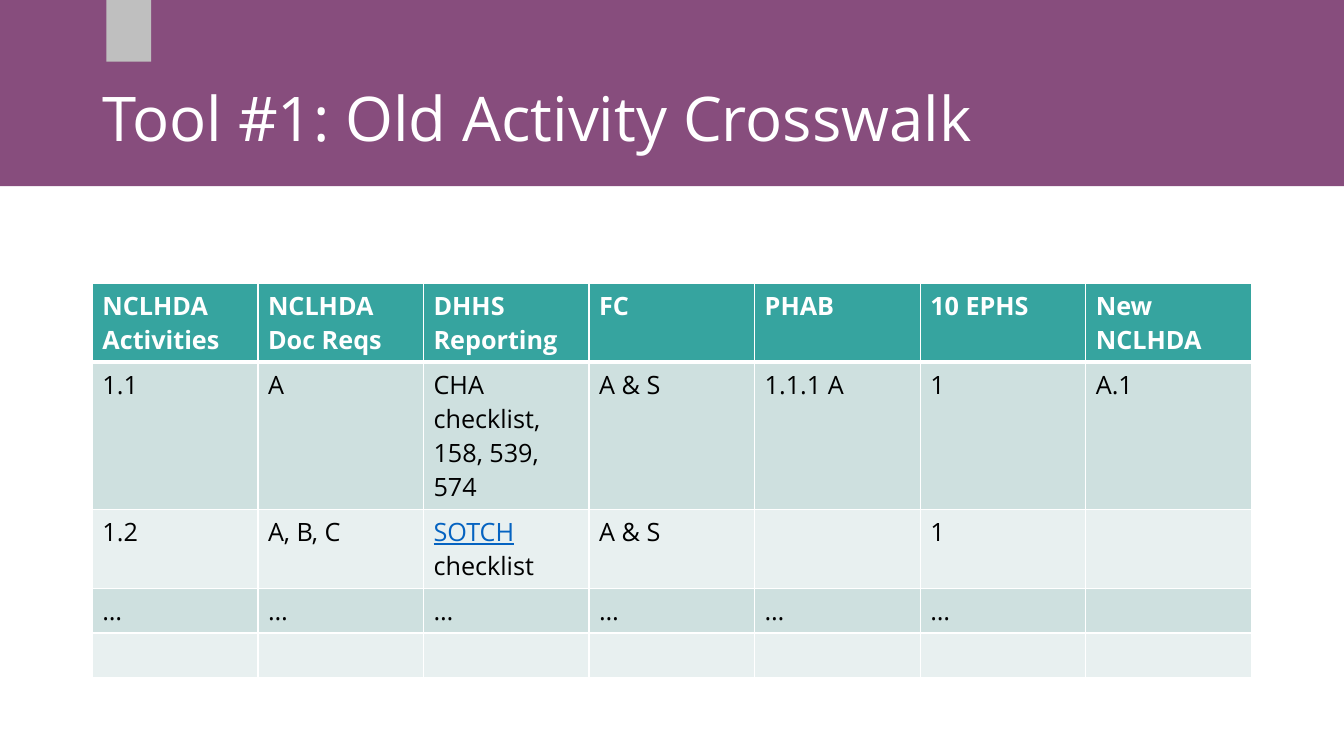
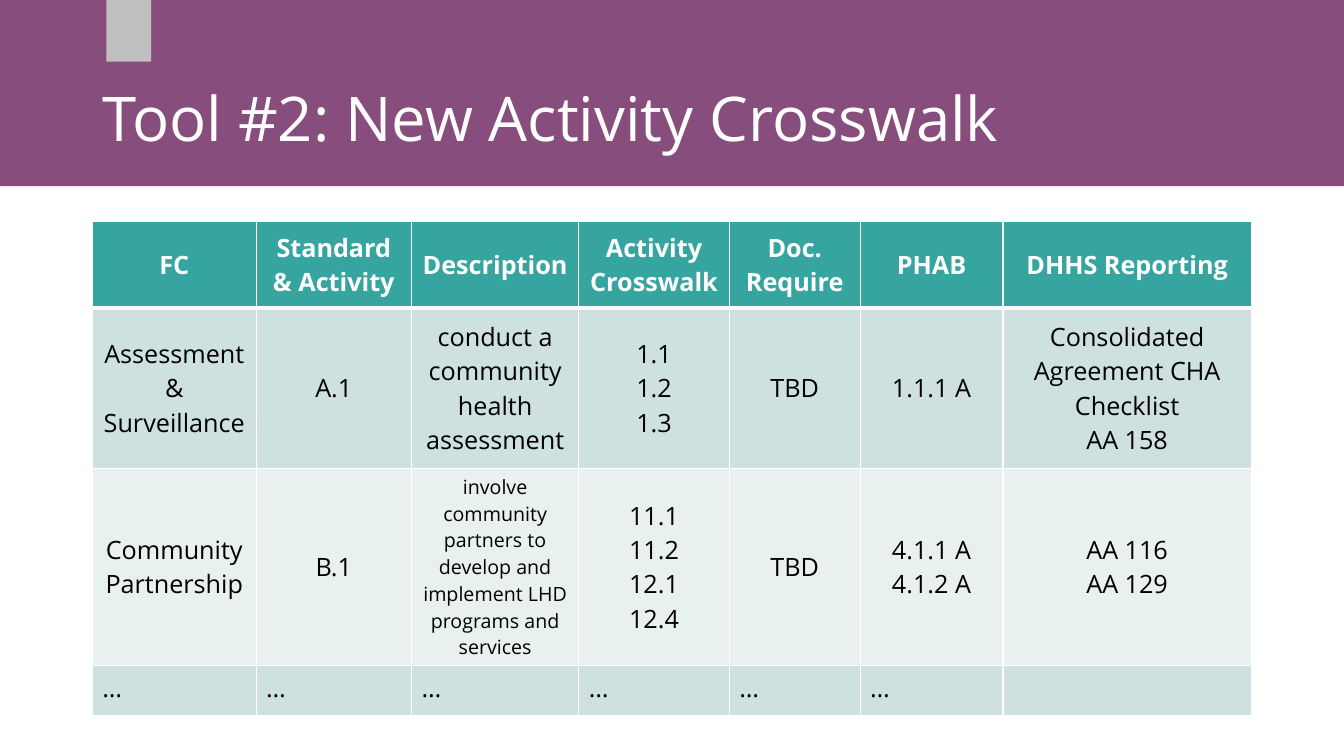
from pptx import Presentation
from pptx.dml.color import RGBColor
from pptx.enum.shapes import MSO_SHAPE
from pptx.enum.text import MSO_ANCHOR, PP_ALIGN
from pptx.oxml.ns import qn
from pptx.util import Pt
from lxml import etree

RECTANGLE = MSO_SHAPE.RECTANGLE
MIDDLE, TOP = MSO_ANCHOR.MIDDLE, MSO_ANCHOR.TOP
CENTER, LEFT = PP_ALIGN.CENTER, PP_ALIGN.LEFT

FONT = "Open Sans"
COLORS = {
    "band": "874D7D",
    "tab": "BFBFBF",
    "header": "36A49F",
    "odd row": "CEE0DF",
    "even row": "E8F0F0",
    "light": "FFFFFF",
    "dark": "000000",
    "link": "0563C1",
}
PAGE_WIDTH, PAGE_HEIGHT = 960, 540
MARGIN = 66
CONTENT_WIDTH = PAGE_WIDTH - 2 * MARGIN
BAND_BOX = (0, 0, PAGE_WIDTH, 133)
TAB_BOX = (76, 0, 32, 44)
TITLE_BOX = (MARGIN, 29, CONTENT_WIDTH, 104)
TITLE_ONLY = 5

OLD_ROWS = [
    ["NCLHDA Activities", "NCLHDA Doc Reqs", "DHHS Reporting", "FC", "PHAB",
     "10 EPHS", "New NCLHDA"],
    ["1.1", "A", "CHA checklist, 158, 539, 574", "A & S", "1.1.1 A", "1", "A.1"],
    ["1.2", "A, B, C", "SOTCH", "A & S", "", "1", ""],
    ["…"] * 6 + [""],
    [""] * 7,
]
NEW_ROWS = [
    ["FC", "Standard & Activity", "Description", "Activity Crosswalk",
     "Doc. Require", "PHAB", "DHHS Reporting"],
    ["Assessment & Surveillance", "A.1", "conduct a community health assessment",
     "1.1\n1.2\n1.3", "TBD", "1.1.1 A",
     "Consolidated Agreement CHA Checklist\nAA 158"],
    ["Community Partnership", "B.1",
     "involve community partners to develop and implement LHD programs and services",
     "11.1\n11.2\n12.1\n12.4", "TBD", "4.1.1 A\n4.1.2 A", "AA 116\nAA 129"],
    ["…"] * 6 + [""],
]


def rgb(name):
    return RGBColor.from_string(COLORS[name])


def points(box):
    return [Pt(length) for length in box]


def style_span(span, size, color, bold=False):
    span.font.name = FONT
    span.font.size = Pt(size)
    span.font.bold = bold
    span.font.color.rgb = rgb(color)


def place(shape, box):
    shape.left, shape.top, shape.width, shape.height = points(box)


def decorate_layout(layout, page):
    """Draw the band and tab on a page, then move them to the shared layout."""
    title = layout.placeholders[0]
    place(title, TITLE_BOX)
    for number, (box, color) in enumerate([(BAND_BOX, "band"), (TAB_BOX, "tab")]):
        shape = page.shapes.add_shape(RECTANGLE, *points(box))
        shape.shadow.inherit = False
        shape.fill.solid()
        shape.fill.fore_color.rgb = rgb(color)
        shape.line.fill.background()
        shape.element.nvSpPr.cNvPr.id = 100 + number
        title.element.addprevious(shape.element)


def write_title(page, text):
    title = page.shapes.title
    place(title, TITLE_BOX)
    frame = title.text_frame
    frame.text = text
    frame.word_wrap = True
    frame.vertical_anchor = MIDDLE
    para = frame.paragraphs[0]
    para.alignment = LEFT
    para.line_spacing = 1.1
    style_span(para.runs[0], 44, "light")


def set_borders(cell, widths):
    properties = cell._tc.get_or_add_tcPr()
    for side, width in widths.items():
        line = etree.SubElement(properties, qn(f"a:ln{side}"), w=str(Pt(width)))
        fill = etree.SubElement(line, qn("a:solidFill"))
        etree.SubElement(fill, qn("a:srgbClr"), val=COLORS["light"])


def fill_cell(cell, text, row, centered):
    # Borders come before the fill in the cell properties
    set_borders(cell, {"L": 1, "R": 1, "T": 3 if row == 1 else 1,
                       "B": 3 if row == 0 else 1})
    cell.fill.solid()
    fill = "header" if row == 0 else "odd row" if row % 2 else "even row"
    cell.fill.fore_color.rgb = rgb(fill)
    cell.vertical_anchor = MIDDLE if centered else TOP
    cell.text_frame.text = text
    for para in cell.text_frame.paragraphs:
        para.alignment = CENTER if centered else LEFT
        for span in para.runs:
            style_span(span, 18, "dark" if row else "light", bold=row == 0)


def add_crosswalk(page, top, rows, widths, heights, centered_rows=0):
    box = (MARGIN, top, sum(widths), sum(heights))
    table = page.shapes.add_table(len(rows), len(widths), *points(box)).table
    for column, width in zip(table.columns, widths):
        column.width = Pt(width)
    for row, (texts, height) in enumerate(zip(rows, heights)):
        table.rows[row].height = Pt(height)
        for column, text in enumerate(texts):
            fill_cell(table.cell(row, column), text, row, row < centered_rows)
    return table


def build_old_crosswalk(page):
    write_title(page, "Tool #1: Old Activity Crosswalk")
    table = add_crosswalk(page, 202.5, OLD_ROWS, [CONTENT_WIDTH / 7] * 7,
                          [56, 105, 56, 32, 32])
    # Underlined checklist name
    para = table.cell(2, 2).text_frame.paragraphs[0]
    para.runs[0].font.underline = True
    para.runs[0].font.color.rgb = rgb("link")
    span = para.add_run()
    span.text = " checklist"
    style_span(span, 18, "dark")


def build_new_crosswalk(page):
    write_title(page, "Tool #2: New Activity Crosswalk")
    table = add_crosswalk(page, 158, NEW_ROWS,
                          [117, 111, 119.5, 107.5, 93.5, 102, 177.5],
                          [62, 114.5, 141, 36], centered_rows=3)
    # Longest description is set smaller
    table.cell(2, 2).text_frame.paragraphs[0].runs[0].font.size = Pt(14)


def main():
    deck = Presentation()
    deck.slide_width, deck.slide_height = Pt(PAGE_WIDTH), Pt(PAGE_HEIGHT)
    layout = deck.slide_layouts[TITLE_ONLY]
    pages = [deck.slides.add_slide(layout) for _ in range(2)]
    decorate_layout(layout, pages[0])
    build_old_crosswalk(pages[0])
    build_new_crosswalk(pages[1])
    deck.save("out.pptx")


if __name__ == "__main__":
    main()
